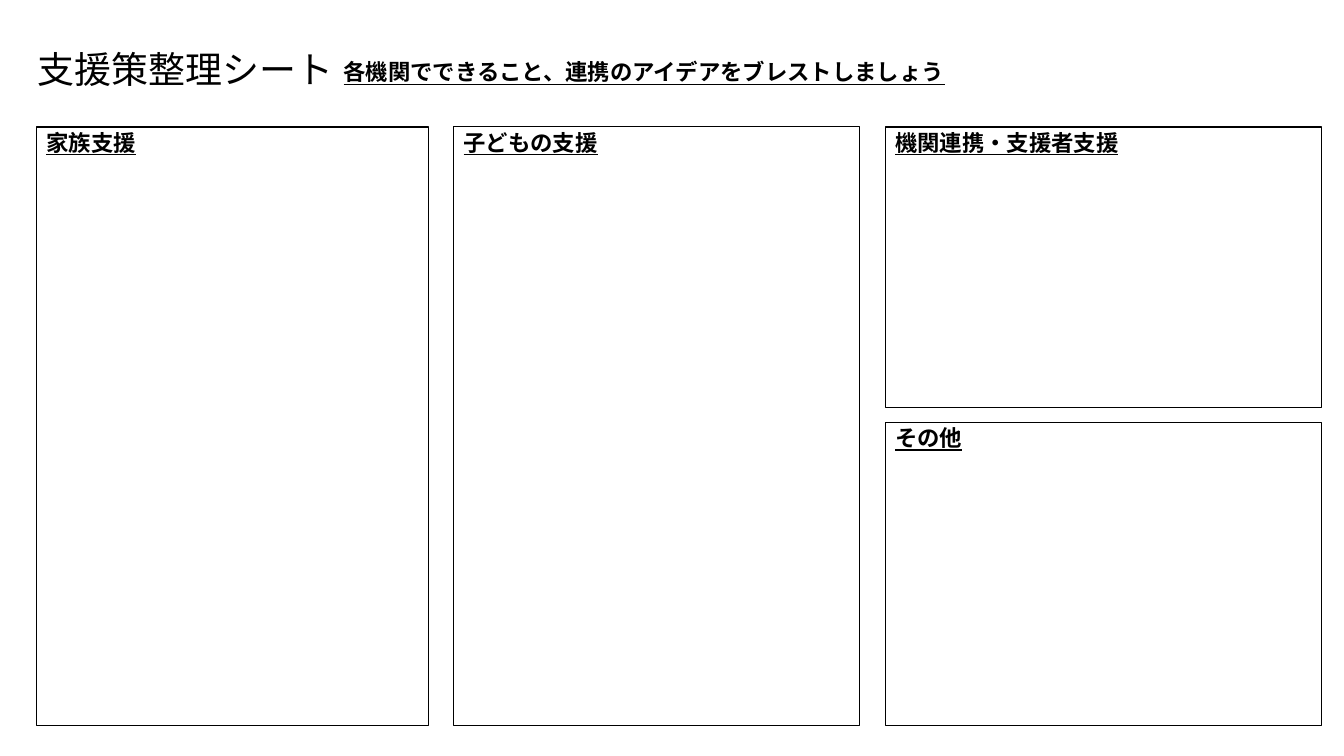
from lxml.etree import SubElement
from pptx import Presentation
from pptx.dml.color import RGBColor
from pptx.enum.shapes import MSO_SHAPE
from pptx.enum.text import MSO_ANCHOR, MSO_AUTO_SIZE, PP_ALIGN
from pptx.oxml.ns import qn
from pptx.util import Emu, Pt

PX = 9144
FONT = "Noto Sans CJK JP"
BLACK = "000000"
WHITE = "FFFFFF"
HEADING = {"size": Pt(16), "bold": True, "underline": True}
TITLE = {"size": Pt(26.4), "bold": False, "underline": False}


def px(length):
    return Emu(length * PX)


def color(hex_value):
    return RGBColor.from_string(hex_value)


def set_all(target, values):
    for key, value in values.items():
        setattr(target, key, value)


def place(part, box):
    set_all(part, dict(zip(("left", "top", "width", "height"), map(px, box))))


def write(part, text, font_format, spacing=0.9, align=PP_ALIGN.LEFT, inset=5):
    frame = part.text_frame
    set_all(frame, {
        "word_wrap": True,
        "auto_size": MSO_AUTO_SIZE.NONE,
        "vertical_anchor": MSO_ANCHOR.TOP,
        "margin_left": px(10),
        "margin_right": px(10),
        "margin_top": px(inset),
        "margin_bottom": px(inset),
    })
    paragraph = frame.paragraphs[0]
    set_all(paragraph, {
        "alignment": align,
        "line_spacing": spacing,
        "space_before": Pt(0),
    })
    properties = paragraph._p.get_or_add_pPr()
    properties.set("marL", "0")
    properties.set("indent", "0")
    SubElement(properties, qn("a:buNone"))
    run = paragraph.add_run()
    run.text = text
    set_all(run.font, {"name": FONT, **font_format})
    run.font.color.rgb = color(BLACK)
    SubElement(run._r.get_or_add_rPr(), qn("a:ea"), typeface=FONT)


def panel(part, box, heading, align=PP_ALIGN.LEFT):
    place(part, box)
    part.fill.solid()
    part.fill.fore_color.rgb = color(WHITE)
    part.line.color.rgb = color(BLACK)
    part.line.width = Pt(0.75)
    write(part, heading, HEADING, align=align)


def header(slide, box):
    left, top, width, height = box
    title = slide.shapes.title
    place(title, (left, top + 2, 608, height))
    write(title, "支援策整理シート", TITLE, spacing=0.7)
    prompt_offset = 304
    prompt = slide.shapes.add_textbox(
        *map(px, (left + prompt_offset, top, width - prompt_offset, height)))
    write(prompt, "各機関でできること、連携のアイデアをブレストしましょう", HEADING, inset=10)


def support_panels(slide, box):
    left, top, width, height = box
    gap, row_gap = 25, 15
    family_width, child_width, partner_height = 389, 403, 278
    child_left = left + family_width + gap
    partner_left = child_left + child_width + gap
    partner_width = left + width - partner_left
    other_top = top + partner_height + row_gap

    panel(slide.placeholders[1], (left, top, family_width, height),
          "家族支援", PP_ALIGN.JUSTIFY)
    for heading, area in (
        ("子どもの支援", (child_left, top, child_width, height)),
        ("機関連携・支援者支援", (partner_left, top, partner_width, partner_height)),
        ("その他", (partner_left, other_top, partner_width, top + height - other_top)),
    ):
        frame = slide.shapes.add_shape(MSO_SHAPE.RECTANGLE, *map(px, area))
        frame.shadow.inherit = False
        panel(frame, area, heading)


def main():
    presentation = Presentation()
    set_all(presentation, {"slide_width": px(1333), "slide_height": px(750)})
    slide = presentation.slides.add_slide(presentation.slide_layouts[1])
    support_panels(slide, (36, 126, 1275, 594))
    header(slide, (27, 51, 1284, 44))
    presentation.save("out.pptx")


if __name__ == "__main__":
    main()
